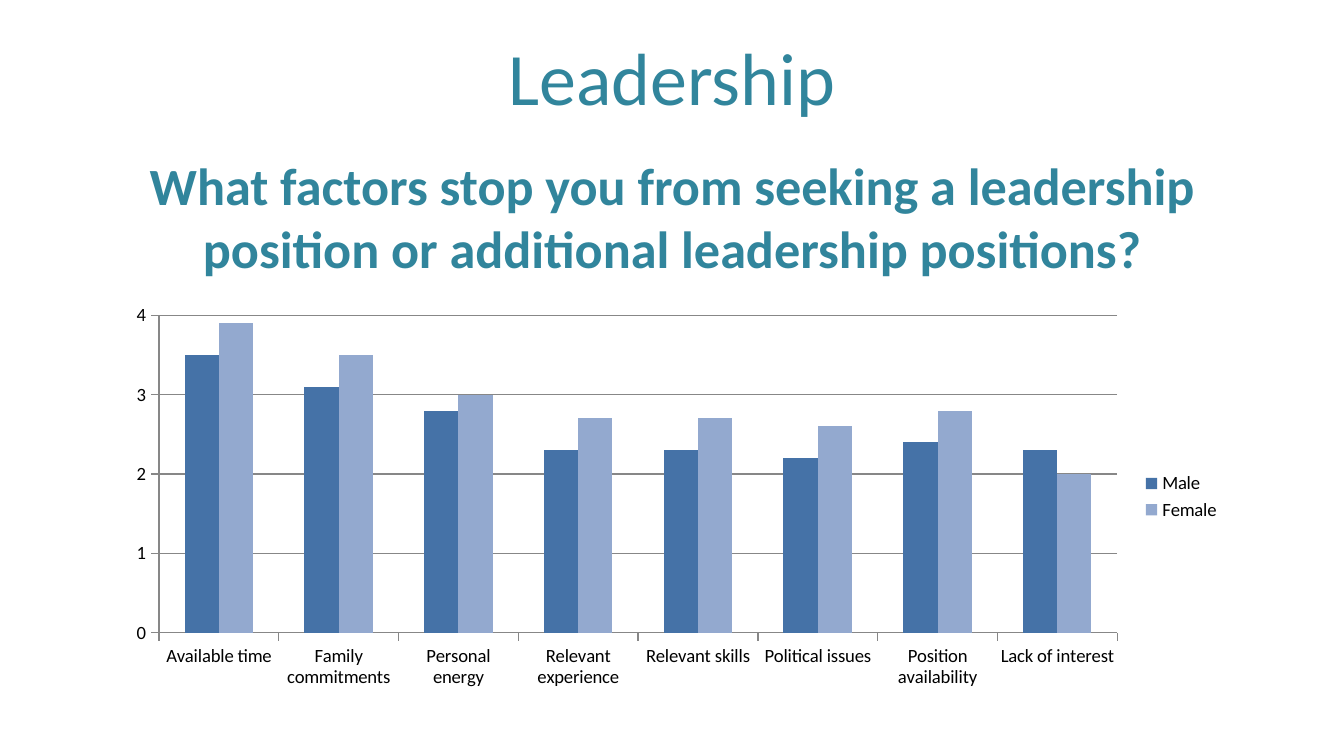
from lxml.etree import SubElement
from pptx import Presentation
from pptx.chart.data import CategoryChartData
from pptx.dml.color import RGBColor
from pptx.enum.chart import XL_CHART_TYPE as ChartType, XL_LEGEND_POSITION as LegendPosition
from pptx.enum.chart import XL_TICK_MARK as TickMark
from pptx.enum.text import MSO_ANCHOR as Anchor, PP_ALIGN as Align
from pptx.oxml.ns import qn
from pptx.util import Inches, Pt

WIDTH = 10
HEIGHT = WIDTH * 9 / 16
FONT = "Calibri"
TEAL, BLACK, GREY = "31859C", "000000", "878787"
TITLE_BOX = (5, 4.09, 90, 11.91)
QUESTION_BOX = (5, 19.38, 90, 18.49)
CHART_BOX = (8.5, 39.29, 83.3, 52.8)
PLOT_BOX = {"x": 4, "y": 4.6, "w": 85.6, "h": 79.5}
FACTORS = ["Available time", "Family commitments", "Personal energy", "Relevant experience",
           "Relevant skills", "Political issues", "Position availability", "Lack of interest"]
SCORES = {
    "Male": ("4572A7", [3.5, 3.1, 2.8, 2.3, 2.3, 2.2, 2.4, 2.3]),
    "Female": ("93A9CF", [3.9, 3.5, 3, 2.7, 2.7, 2.6, 2.8, 2]),
}


def color(value):
    """Turn a hex string into a colour."""
    return RGBColor.from_string(value)


def place(box):
    """Turn percentages of the slide into left, top, width and height."""
    return [Inches(share * side / 100) for share, side in zip(box, (WIDTH, HEIGHT) * 2)]


def format_font(font, size=10, fill=BLACK, bold=False):
    """Set the typeface, size, colour and weight of a font."""
    font.name, font.size, font.bold = FONT, Pt(size), bold
    font.color.rgb = color(fill)


def write_text(shape, text, size=28, fill=TEAL, bold=False, anchor=Anchor.TOP):
    """Write one centred, wrapped paragraph into a shape."""
    frame = shape.text_frame
    frame.word_wrap, frame.vertical_anchor = True, anchor
    paragraph = frame.paragraphs[0]
    paragraph.alignment = Align.CENTER
    run = paragraph.add_run()
    run.text = text
    format_font(run.font, size, fill, bold)


def add_title(slide, box):
    """Move and fill the title placeholder."""
    title = slide.shapes.title
    title.left, title.top, title.width, title.height = place(box)
    write_text(title, "Leadership", size=39.6, anchor=Anchor.MIDDLE)


def add_question(slide, box):
    """Add the survey question below the title."""
    question = slide.shapes.add_textbox(*place(box))
    write_text(question, "What factors stop you from seeking a leadership position "
                         "or additional leadership positions?", bold=True)


def format_line(line):
    """Draw a thin grey line."""
    line.color.rgb, line.width = color(GREY), Pt(0.75)


def format_axis(axis):
    """Give an axis outward ticks and a grey line."""
    axis.major_tick_mark, axis.minor_tick_mark = TickMark.OUTSIDE, TickMark.NONE
    format_line(axis.format.line)
    format_font(axis.tick_labels.font)


def set_plot_area(chart, box):
    """Fix the inner plot area as percentages of the chart."""
    plot_area = chart.plots[0]._element.getparent()
    for old in plot_area.findall(qn("c:layout")):
        plot_area.remove(old)
    layout = SubElement(plot_area, qn("c:layout"))
    plot_area.insert(0, layout)
    manual = SubElement(layout, qn("c:manualLayout"))
    shares = {name: share / 100 for name, share in box.items()}
    settings = {"layoutTarget": "inner", "xMode": "edge", "yMode": "edge", **shares}
    for name, value in settings.items():
        SubElement(manual, qn(f"c:{name}")).set("val", str(value))


def add_scores_chart(slide, box):
    """Add the clustered columns that compare male and female scores."""
    data = CategoryChartData(number_format="General")
    data.categories = FACTORS
    for name, (_, values) in SCORES.items():
        data.add_series(name, values)
    chart = slide.shapes.add_chart(ChartType.COLUMN_CLUSTERED, *place(box), data).chart
    chart.has_title = False
    format_font(chart.font)
    chart.has_legend = True
    chart.legend.position = LegendPosition.RIGHT
    chart.legend.include_in_layout = False
    format_font(chart.legend.font)
    plot = chart.plots[0]
    plot.gap_width, plot.overlap, plot.vary_by_categories = 150, 0, False
    for series, (fill, _) in zip(plot.series, SCORES.values()):
        series.format.fill.solid()
        series.format.fill.fore_color.rgb = color(fill)
    value_axis = chart.value_axis
    for axis in (chart.category_axis, value_axis):
        format_axis(axis)
    value_axis.minimum_scale, value_axis.maximum_scale, value_axis.major_unit = 0, 4, 1
    value_axis.has_major_gridlines = True
    format_line(value_axis.major_gridlines.format.line)
    set_plot_area(chart, PLOT_BOX)


def main():
    """Build and save the slide."""
    presentation = Presentation()
    presentation.slide_width, presentation.slide_height = Inches(WIDTH), Inches(HEIGHT)
    slide = presentation.slides.add_slide(presentation.slide_layouts[5])
    add_title(slide, TITLE_BOX)
    add_scores_chart(slide, CHART_BOX)
    add_question(slide, QUESTION_BOX)
    presentation.save("out.pptx")


if __name__ == "__main__":
    main()
